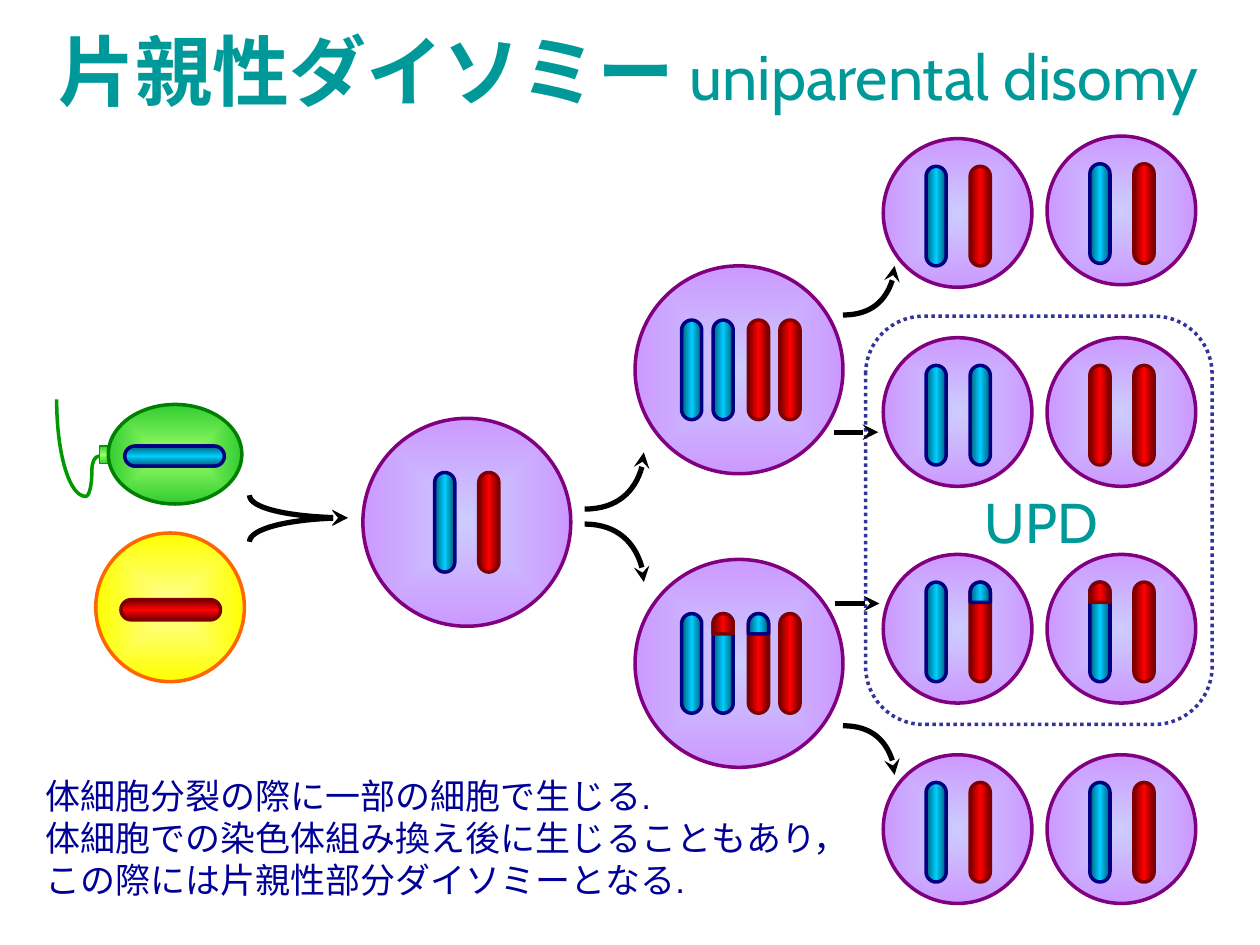
from lxml.etree import SubElement
from pptx import Presentation
from pptx.dml.color import RGBColor
from pptx.enum.dml import MSO_LINE
from pptx.enum.shapes import MSO_CONNECTOR, MSO_SHAPE
from pptx.enum.text import MSO_ANCHOR, MSO_AUTO_SIZE, PP_ALIGN
from pptx.oxml.ns import qn
from pptx.util import Pt

PX = 9144
TEAL = RGBColor(0x00, 0x99, 0x99)
NAVY_TEXT = RGBColor(0x00, 0x00, 0x99)
BLACK = RGBColor(0x00, 0x00, 0x00)
FRAME_BLUE = RGBColor(0x33, 0x33, 0x99)
PURPLE = RGBColor(0x80, 0x00, 0x80)
LILAC = RGBColor(0xCC, 0x99, 0xFF)
PALE_LILAC = RGBColor(0xCC, 0xCC, 0xFF)
NAVY = RGBColor(0x00, 0x00, 0x80)
DARK_CYAN = RGBColor(0x00, 0x5E, 0x76)
CYAN = RGBColor(0x00, 0xCC, 0xFF)
MAROON = RGBColor(0x80, 0x00, 0x00)
DARK_RED = RGBColor(0x76, 0x00, 0x00)
RED = RGBColor(0xFF, 0x00, 0x00)
ORANGE = RGBColor(0xFF, 0x66, 0x00)
YELLOW = RGBColor(0xFF, 0xFF, 0x00)
PALE_YELLOW = RGBColor(0xFF, 0xFF, 0x99)
DARK_GREEN = RGBColor(0x00, 0x80, 0x00)
TAIL_GREEN = RGBColor(0x00, 0x99, 0x00)
GREEN = RGBColor(0x33, 0xCC, 0x33)
PALE_GREEN = RGBColor(0x99, 0xFF, 0x66)

JAPANESE_FONT = "Noto Sans CJK JP"
PATERNAL = ((DARK_CYAN, CYAN, DARK_CYAN), NAVY)
MATERNAL = ((DARK_RED, RED, DARK_RED), MAROON)
LENGTH, WIDTH = 79, 16
BLUE, CRIMSON = (PATERNAL, None), (MATERNAL, None)
BLUE_RED_TIP, RED_BLUE_TIP = (PATERNAL, MATERNAL), (MATERNAL, PATERNAL)
NORMAL_PAIR = (BLUE, CRIMSON)
DAUGHTER_ROWS = (
    ((110, NORMAL_PAIR), (108, NORMAL_PAIR)),
    ((268, (BLUE, BLUE)), (268, (CRIMSON, CRIMSON))),
    ((440, (BLUE, RED_BLUE_TIP)), (440, (BLUE_RED_TIP, CRIMSON))),
    ((599, NORMAL_PAIR), (599, NORMAL_PAIR)),
)


def set_gradient(shape, colors, angle=None):
    """Fill a shape with even stops, linear at an angle or outward from the centre."""
    shape.fill.gradient()
    gradient = shape.element.spPr.find(qn("a:gradFill"))
    for child in list(gradient):
        gradient.remove(child)
    stops = SubElement(gradient, qn("a:gsLst"))
    for index, color in enumerate(colors):
        position = 100000 * index // (len(colors) - 1)
        stop = SubElement(stops, qn("a:gs"), pos=str(position))
        SubElement(stop, qn("a:srgbClr"), val=str(color))
    if angle is None:
        radial = SubElement(gradient, qn("a:path"), path="shape")
        SubElement(radial, qn("a:fillToRect"), {side: "50000" for side in "ltrb"})
    else:
        SubElement(gradient, qn("a:lin"), ang=str(angle * 60000), scaled="0")


def add_preset(slide, kind, box, line_color, colors=None, angle=None, weight=2):
    """Add an outlined preset shape in a box, with a gradient or no fill."""
    shape = slide.shapes.add_shape(kind, *(value * PX for value in box))
    shape.shadow.inherit = False
    shape.line.color.rgb = line_color
    shape.line.width = Pt(weight)
    if colors:
        set_gradient(shape, colors, angle)
    else:
        shape.fill.background()
    return shape


def add_chromosome(slide, left, top, body, tip=None, horizontal=False):
    """Add a chromosome, with a recombined tip if one is given."""
    size = (LENGTH, WIDTH) if horizontal else (WIDTH, LENGTH)
    colors, outline = body
    rod = add_preset(slide, MSO_SHAPE.ROUNDED_RECTANGLE, (left, top, *size),
                     outline, colors, 90 if horizontal else 0)
    rod.adjustments[0] = 0.5
    if tip:
        colors, outline = tip
        cap = add_preset(slide, MSO_SHAPE.FLOWCHART_DELAY,
                         (left, top, WIDTH, WIDTH), outline, colors, 90)
        cap.rotation = 270


def add_cell(slide, left, top, size, offsets, inset, chromosomes):
    """Add a round cell with its upright chromosomes."""
    add_preset(slide, MSO_SHAPE.OVAL, (left, top, size, size), PURPLE, (PALE_LILAC, LILAC))
    for offset, (body, tip) in zip(offsets, chromosomes):
        add_chromosome(slide, left + offset, top + inset, body, tip)


def add_curve(slide, start, points, color, weight):
    """Add an open Bezier curve, three points to each segment."""
    builder = slide.shapes.build_freeform(*start, scale=PX)
    builder.add_line_segments(points, close=False)
    shape = builder.convert_to_shape()
    shape.shadow.inherit = False
    shape.fill.background()
    shape.line.color.rgb = color
    shape.line.width = Pt(weight)
    outline = shape.element.find(".//" + qn("a:path"))
    segments = outline.findall(qn("a:lnTo"))
    for index in range(0, len(segments), 3):
        curve = SubElement(outline, qn("a:cubicBezTo"))
        for segment in segments[index:index + 3]:
            curve.append(segment[0])
            outline.remove(segment)
    return shape


def add_arrowhead(shape):
    """End a line with a stealth arrowhead."""
    SubElement(shape.line._get_or_add_ln(), qn("a:tailEnd"), type="stealth")


def add_curved_arrow(slide, start, end, vertical_first=False):
    """Add a quarter-ellipse arrow from start to end."""
    (x1, y1), (x2, y2) = start, end
    near_x, far_x = (round(x1 + (x2 - x1) * part) for part in (0.45, 0.55))
    near_y, far_y = (round(y1 + (y2 - y1) * part) for part in (0.45, 0.55))
    controls = [(x1, far_y), (near_x, y2)] if vertical_first else [(far_x, y1), (x2, near_y)]
    add_arrowhead(add_curve(slide, start, [*controls, end], BLACK, 3))


def add_straight_arrow(slide, left, top, length):
    """Add a horizontal arrow."""
    connector = slide.shapes.add_connector(
        MSO_CONNECTOR.STRAIGHT, left * PX, top * PX, (left + length) * PX, top * PX)
    connector.line.color.rgb = BLACK
    connector.line.width = Pt(3)
    add_arrowhead(connector)
    SubElement(connector.element.spPr, qn("a:effectLst"))


def add_sperm(slide, left, top):
    """Add the sperm with its tail and paternal chromosome."""
    bends = [(30, 45), (28, 50), (28, 56), (28, 68), (26, 77), (23, 77),
             (10, 77), (0, 43), (0, 0)]
    add_curve(slide, (left + 34, top + 45),
              [(left + x, top + y) for x, y in bends], TAIL_GREEN, 2)
    add_preset(slide, MSO_SHAPE.RECTANGLE, (left + 34, top + 37, 14, 14),
               TAIL_GREEN, (GREEN, PALE_GREEN, GREEN), 90, 1)
    add_preset(slide, MSO_SHAPE.OVAL, (left + 41, top + 4, 106, 79),
               DARK_GREEN, (PALE_GREEN, GREEN))
    add_chromosome(slide, left + 54, top + 37, PATERNAL, horizontal=True)


def add_egg(slide, left, top, size):
    """Add the egg with its maternal chromosome."""
    add_preset(slide, MSO_SHAPE.OVAL, (left, top, size, size), ORANGE, (PALE_YELLOW, YELLOW))
    add_chromosome(slide, left + 20, top + 53, MATERNAL, horizontal=True)


def set_east_asian_font(run):
    """Use the Japanese font for the East Asian text of a run."""
    SubElement(run.font._element, qn("a:ea"), typeface=JAPANESE_FONT)


def add_title(slide, left, top, width, height):
    """Place the title and format its Japanese and English parts."""
    title = slide.shapes.title
    title.left, title.top, title.width, title.height = (
        value * PX for value in (left, top, width, height))
    frame = title.text_frame
    frame.word_wrap = False
    frame.auto_size = MSO_AUTO_SIZE.NONE
    frame.vertical_anchor = MSO_ANCHOR.MIDDLE
    paragraph = frame.paragraphs[0]
    paragraph.alignment = PP_ALIGN.CENTER
    paragraph.font.color.rgb = TEAL
    for text, size, font, bold in (("片親性ダイソミー", 44, JAPANESE_FONT, True),
                                   (" ", 36, JAPANESE_FONT, True),
                                   ("uniparental disomy", 36, "Cabin", False)):
        run = paragraph.add_run()
        run.text = text
        run.font.size, run.font.name, run.font.bold = Pt(size), font, bold
        run.font.color.rgb = TEAL
        set_east_asian_font(run)


def add_text(slide, box, lines, font, size, color, alignment=PP_ALIGN.LEFT, spacing=None):
    """Add a text box with one paragraph for each line."""
    frame = slide.shapes.add_textbox(*(value * PX for value in box)).text_frame
    frame.word_wrap = True
    for index, line in enumerate(lines):
        paragraph = frame.add_paragraph() if index else frame.paragraphs[0]
        paragraph.alignment = alignment
        paragraph.line_spacing = spacing
        run = paragraph.add_run()
        run.text = line
        run.font.name, run.font.size = font, Pt(size)
        run.font.color.rgb = color
        set_east_asian_font(run)


def main():
    """Build and save the slide."""
    presentation = Presentation()
    presentation.slide_width, presentation.slide_height = 1000 * PX, 750 * PX
    slide = presentation.slides.add_slide(presentation.slide_layouts[5])
    add_title(slide, 6, 13, 986, 84)
    add_sperm(slide, 45, 317)
    add_egg(slide, 76, 423, 118)
    add_cell(slide, 288, 332, 165, (57, 92), 43, NORMAL_PAIR)
    for top, chromosomes in ((211, (BLUE, BLUE, CRIMSON, CRIMSON)),
                             (444, (BLUE, BLUE_RED_TIP, RED_BLUE_TIP, CRIMSON))):
        add_cell(slide, 504, top, 165, (37, 62, 90, 115), 43, chromosomes)
    for row in DAUGHTER_ROWS:
        for left, (top, chromosomes) in zip((701, 831), row):
            add_cell(slide, left, top, 118, (34, 69), 22, chromosomes)
    frame = add_preset(slide, MSO_SHAPE.ROUNDED_RECTANGLE, (687, 251, 275, 324), FRAME_BLUE)
    frame.line.dash_style = MSO_LINE.ROUND_DOT
    add_text(slide, (760, 382, 133, 64), ["UPD"], "Cabin", 32, TEAL, PP_ALIGN.CENTER)
    for start_top in (393, 430):
        add_curved_arrow(slide, (198, start_top), (276, 411), vertical_first=True)
    for start, end in (((464, 404), (511, 359)), ((464, 416), (511, 462)),
                       ((669, 250), (710, 211)), ((669, 576), (710, 615))):
        add_curved_arrow(slide, start, end)
    add_straight_arrow(slide, 662, 343, 35)
    add_straight_arrow(slide, 663, 479, 35)
    add_text(slide, (26, 610, 661, 111),
             ["体細胞分裂の際に一部の細胞で生じる.",
              "体細胞での染色体組み換え後に生じることもあり，",
              "この際には片親性部分ダイソミーとなる."],
             "Arial", 20, NAVY_TEXT, spacing=Pt(24))
    presentation.save("out.pptx")


if __name__ == "__main__":
    main()
